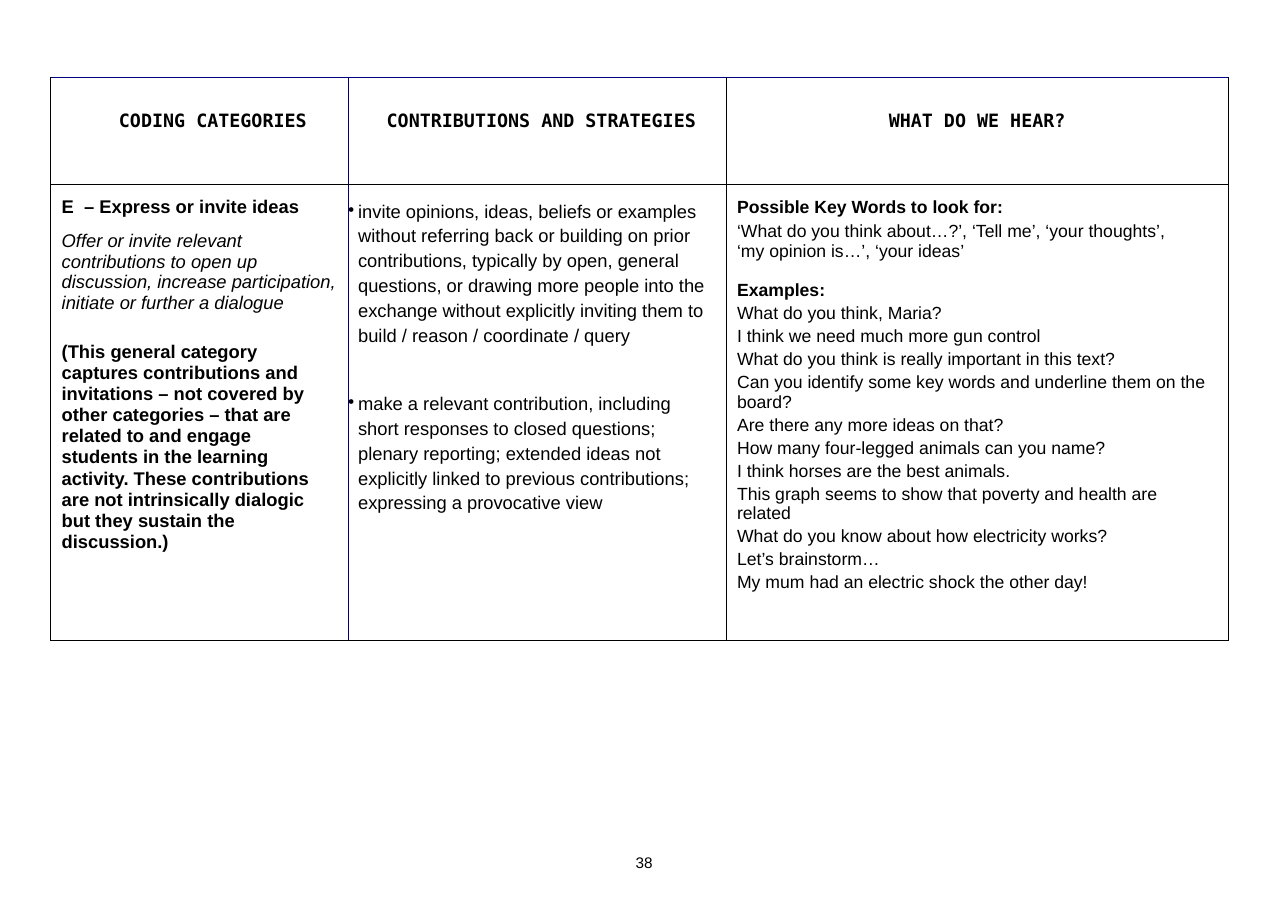
import dataclasses

import lxml.etree
import pptx
import pptx.dml.color
import pptx.enum.text
import pptx.oxml.ns
import pptx.util

Inches = pptx.util.Inches
Pt = pptx.util.Pt
Align = pptx.enum.text.PP_ALIGN


@dataclasses.dataclass(frozen=True)
class Theme:
    """Colours, fonts and type sizes of the page."""

    ink: str = "000000"
    rule: str = "000080"
    body_font: str = "Arial"
    heading_font: str = "DejaVu Sans Mono"
    body_size: float = 12
    example_size: float = 11.5
    number_size: float = 10
    rule_width: float = 0.48


THEME = Theme()
COLUMNS = (2.7, 3.43, 4.56)
ROWS = (0.97, 4.14)

HEADINGS = (
    ("CODING CATEGORIES", dict(left=0.62)),
    ("CONTRIBUTIONS AND STRATEGIES", dict(left=0.35)),
    ("WHAT DO WE HEAR?", dict(align=Align.CENTER)),
)
CATEGORY = (
    ("E  – Express or invite ideas", dict(bold=True)),
    ("Offer or invite relevant contributions to open up discussion, increase participation, "
     "initiate or further a dialogue", dict(italic=True, before=8.7)),
    ("(This general category captures contributions and invitations – not covered by other "
     "categories – that are related to and engage students in the learning activity. These "
     "contributions are not intrinsically dialogic but they sustain the discussion.)",
     dict(bold=True, before=18, spacing=1.03, right=0.25)),
)
STRATEGIES = (
    ("invite opinions, ideas, beliefs or examples without referring back or building on prior "
     "contributions, typically by open, general questions, or drawing more people into the "
     "exchange without explicitly inviting them to build / reason / coordinate / query", {}),
    ("make a relevant contribution, including short responses to closed questions; plenary "
     "reporting; extended ideas not explicitly linked to previous contributions; expressing a "
     "provocative view", dict(before=28.3, right=0.2)),
)
KEY_WORDS = (
    ("Possible Key Words to look for:", dict(bold=True)),
    ("‘What do you think about…?’, ‘Tell me’, ‘your thoughts’, ‘my opinion is…’, ‘your ideas’",
     dict(before=3.1, spacing=1.01, right=0.45)),
    ("Examples:", dict(bold=True, before=13)),
)
EXAMPLES = (
    ("What do you think, Maria?", 0),
    ("I think we need much more gun control", 0),
    ("What do you think is really important in this text?", 0),
    ("Can you identify some key words and underline them on the board?", 0),
    ("Are there any more ideas on that?", 0),
    ("How many four-legged animals can you name?", 0),
    ("I think horses are the best animals.", 0),
    ("This graph seems to show that poverty and health are related", 0.45),
    ("What do you know about how electricity works?", 0),
    ("Let’s brainstorm…", 0),
    ("My mum had an electric shock the other day!", 0),
)


def write(para, text, *, font=THEME.body_font, size=THEME.body_size, bold=False,
          italic=False, align=Align.LEFT, before=0, spacing=1.0, left=0.0, right=0.0,
          bullet=False):
    """Write text into a paragraph with the given format."""
    para.alignment = align
    para.line_spacing = spacing
    para.space_before = Pt(before)
    properties = para._p.get_or_add_pPr()
    properties.set("marL", str(Inches(left)))
    properties.set("marR", str(Inches(right)))
    properties.set("indent", str(-Inches(left) if bullet else 0))
    if bullet:
        mark = lxml.etree.SubElement(properties, pptx.oxml.ns.qn("a:buChar"))
        mark.set("char", "•")
    span = para.add_run()
    span.text = text
    span.font.name = font
    span.font.size = Pt(size)
    span.font.bold = bold
    span.font.italic = italic
    span.font.color.rgb = pptx.dml.color.RGBColor.from_string(THEME.ink)


def draw_borders(cell, row, column):
    """Rule all four sides of a cell and leave its fill empty."""
    properties = cell._tc.get_or_add_tcPr()
    navy_sides = {
        "L": column == 1,
        "R": column == 0,
        "T": row == 0,
        "B": False,
    }
    for side, navy in navy_sides.items():
        line = lxml.etree.SubElement(properties, pptx.oxml.ns.qn(f"a:ln{side}"))
        line.set("w", str(Pt(THEME.rule_width)))
        fill = lxml.etree.SubElement(line, pptx.oxml.ns.qn("a:solidFill"))
        colour = lxml.etree.SubElement(fill, pptx.oxml.ns.qn("a:srgbClr"))
        colour.set("val", THEME.rule if navy else THEME.ink)
    cell.fill.background()


def fill_cell(cell, entries, top, **shared):
    """Fill a cell with paragraphs that share a format."""
    cell.margin_left = cell.margin_right = cell.margin_bottom = 0
    cell.margin_top = Inches(top)
    frame = cell.text_frame
    for index, (text, own) in enumerate(entries):
        para = frame.add_paragraph() if index else frame.paragraphs[0]
        write(para, text, **{**shared, **own})


def add_coding_table(page, left, top):
    """Place the table of coding categories with its corner at left, top."""
    frame = page.shapes.add_table(len(ROWS), len(COLUMNS), Inches(left), Inches(top),
                                  Inches(sum(COLUMNS)), Inches(sum(ROWS)))
    table = frame.table
    table.first_row = table.horz_banding = False
    for column, width in zip(table.columns, COLUMNS):
        column.width = Inches(width)
    for row, height in zip(table.rows, ROWS):
        row.height = Inches(height)
    for row in range(len(ROWS)):
        for column in range(len(COLUMNS)):
            draw_borders(table.cell(row, column), row, column)
    for column, heading in enumerate(HEADINGS):
        fill_cell(table.cell(0, column), [heading], 0.3, font=THEME.heading_font, bold=True)
    examples = tuple((text, dict(before=2.15, right=right)) for text, right in EXAMPLES)
    fill_cell(table.cell(1, 0), CATEGORY, 0.12, left=0.1)
    fill_cell(table.cell(1, 1), STRATEGIES, 0.12, left=0.09, spacing=1.21, bullet=True)
    fill_cell(table.cell(1, 2), KEY_WORDS + examples, 0.12, left=0.1, size=THEME.example_size)


def add_page_number(page, left, top, width, height):
    """Place the page number in the given box."""
    box = page.shapes.add_textbox(Inches(left), Inches(top), Inches(width), Inches(height))
    frame = box.text_frame
    frame.word_wrap = True
    frame.margin_left = frame.margin_right = frame.margin_top = frame.margin_bottom = 0
    write(frame.paragraphs[0], "38", size=THEME.number_size, left=0.03)


def main():
    """Build the deck and save it."""
    deck = pptx.Presentation()
    deck.slide_width = Inches(11.69)
    deck.slide_height = Inches(8.27)
    page = deck.slides.add_slide(deck.slide_layouts[6])
    add_page_number(page, 5.74, 7.75, 0.21, 0.17)
    add_coding_table(page, 0.46, 0.7)
    deck.save("out.pptx")


if __name__ == "__main__":
    main()
